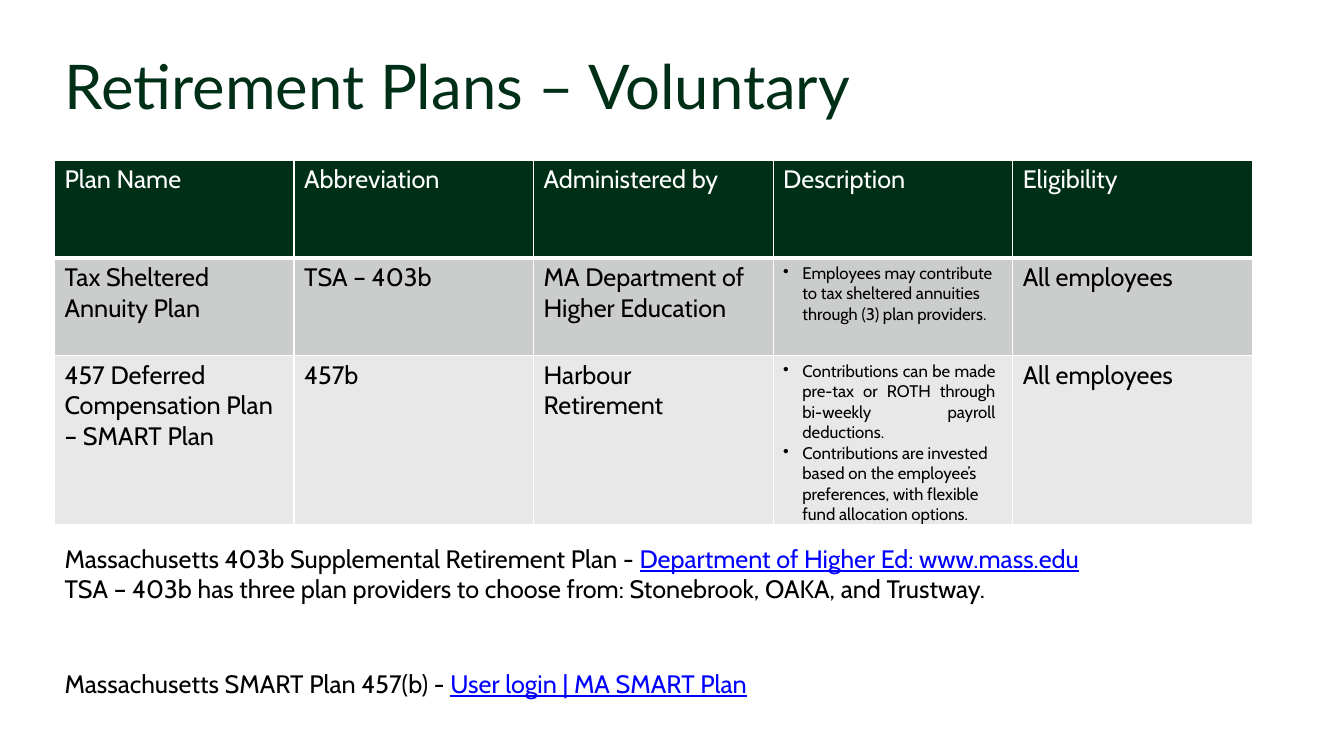
from lxml import etree
from pptx import Presentation
from pptx.dml.color import RGBColor
from pptx.enum.text import MSO_ANCHOR, MSO_AUTO_SIZE, PP_ALIGN
from pptx.oxml.ns import qn
from pptx.util import Inches, Pt

TOP = MSO_ANCHOR.TOP
FIXED = MSO_AUTO_SIZE.NONE
LEFT, JUST = PP_ALIGN.LEFT, PP_ALIGN.JUSTIFY

HUES = {"green": "002F18", "white": "FFFFFF", "black": "000000",
        "link": "0000FF", "dark": "CACDCC", "light": "E7E8E7"}

HEADS = ["Plan Name", "Abbreviation", "Administered by", "Description", "Eligibility"]
PLANS = [
    [["Tax Sheltered", "Annuity Plan"], ["TSA – 403b"],
     ["MA Department of", "Higher Education"],
     ["Employees may contribute to tax sheltered annuities through (3) plan providers."],
     ["All employees"]],
    [["457 Deferred Compensation Plan – SMART Plan"], ["457b"],
     ["Harbour Retirement"],
     ["Contributions can be made pre-tax or ROTH through bi-weekly payroll deductions.",
      "Contributions are invested based on the employee’s preferences, "
      "with flexible fund allocation options."],
     ["All employees"]],
]
NOTES = [
    ("Massachusetts 403b Supplemental Retirement Plan - ",
     "Department of Higher Ed: www.mass.edu", 0),
    ("TSA – 403b has three plan providers to choose from: "
     "Stonebrook, OAKA, and Trustway.", "", 0),
    ("Massachusetts SMART Plan 457(b) - ", "User login | MA SMART Plan", 46),
]


def tint(name):
    """Return the named colour."""
    return RGBColor.from_string(HUES[name])


def style(font, size, hue, face="Cabin"):
    """Set face, size and colour of a font."""
    font.name, font.size, font.bold = face, Pt(size), False
    font.color.rgb = tint(hue)


def inset(frame, left, top, right=0):
    """Set the inner margins of a text frame or cell."""
    frame.margin_left, frame.margin_top = Inches(left), Inches(top)
    frame.margin_right, frame.margin_bottom = Inches(right), 0


def bullet(para):
    """Give a paragraph a hanging bullet."""
    props = para._p.get_or_add_pPr()
    hang = Inches(0.19)
    props.set("marL", str(hang))
    props.set("indent", str(-hang))
    etree.SubElement(props, qn("a:buChar")).set("char", "•")


def edge(cell, row):
    """Draw white cell borders, thick below the header row."""
    props = cell._tc.get_or_add_tcPr()
    for side in "LRTB":
        thick = (row, side) in ((0, "B"), (1, "T"))
        line = etree.SubElement(props, qn("a:ln" + side))
        line.set("w", str(Pt(3 if thick else 1)))
        fill = etree.SubElement(line, qn("a:solidFill"))
        etree.SubElement(fill, qn("a:srgbClr")).set("val", HUES["white"])


def fill_cell(cell, texts, row, listed):
    """Fill one table cell with paragraphs, borders and a ground colour."""
    edge(cell, row)
    cell.fill.solid()
    cell.fill.fore_color.rgb = tint(("green", "dark", "light")[row])
    inset(cell, 0.1, 0.05 if listed else 0.04, 0.17)
    cell.vertical_anchor = TOP
    frame = cell.text_frame
    for num, text in enumerate(texts):
        para = frame.paragraphs[0] if num == 0 else frame.add_paragraph()
        para.add_run().text = text
        if listed:
            bullet(para)
            para.alignment = JUST if row == 2 and num == 0 else LEFT
        style(para.font, 12 if listed else 18, "black" if row else "white")


def add_title(slide, left, top, width, height):
    """Place the slide title in its placeholder."""
    title = slide.shapes.title
    title.left, title.top = Inches(left), Inches(top)
    title.width, title.height = Inches(width), Inches(height)
    frame = title.text_frame
    frame.auto_size, frame.vertical_anchor = FIXED, TOP
    inset(frame, 0.01, 0.02)
    para = frame.paragraphs[0]
    para.add_run().text = "Retirement Plans – Voluntary"
    para.alignment = LEFT
    style(para.font, 44, "green", "Lato")


def add_plans(slide, left, top, width, height):
    """Place the table of plans."""
    rows = [[[head] for head in HEADS]] + PLANS
    table = slide.shapes.add_table(len(rows), len(HEADS), Inches(left), Inches(top),
                                   Inches(width), Inches(height)).table
    for row, tall in zip(table.rows, (0.97, 0.97, height - 2 * 0.97)):
        row.height = Inches(tall)
    for r, row in enumerate(rows):
        for c, texts in enumerate(row):
            fill_cell(table.cell(r, c), texts, r, r > 0 and HEADS[c] == "Description")


def add_notes(slide, left, top, width, height):
    """Place the notes on providers and logins."""
    frame = slide.shapes.add_textbox(Inches(left), Inches(top),
                                     Inches(width), Inches(height)).text_frame
    frame.word_wrap, frame.vertical_anchor = True, TOP
    inset(frame, 0.01, 0.02)
    for num, (text, link, gap) in enumerate(NOTES):
        para = frame.paragraphs[0] if num == 0 else frame.add_paragraph()
        para.add_run().text = text
        if gap:
            para.space_before = Pt(gap)
        style(para.font, 18, "black")
        if link:
            run = para.add_run()
            run.text = link
            run.font.color.rgb = tint("link")
            run.font.underline = True


def main():
    """Build and save the slide."""
    deck = Presentation()
    deck.slide_width, deck.slide_height = Inches(13.33), Inches(7.5)
    slide = deck.slides.add_slide(deck.slide_layouts[5])
    add_title(slide, 0.63, 0.46, 10.77, 0.76)
    add_plans(slide, 0.54, 1.59, 11.88, 3.44)
    add_notes(slide, 0.63, 5.37, 10.08, 1.53)
    deck.save("out.pptx")


if __name__ == "__main__":
    main()
